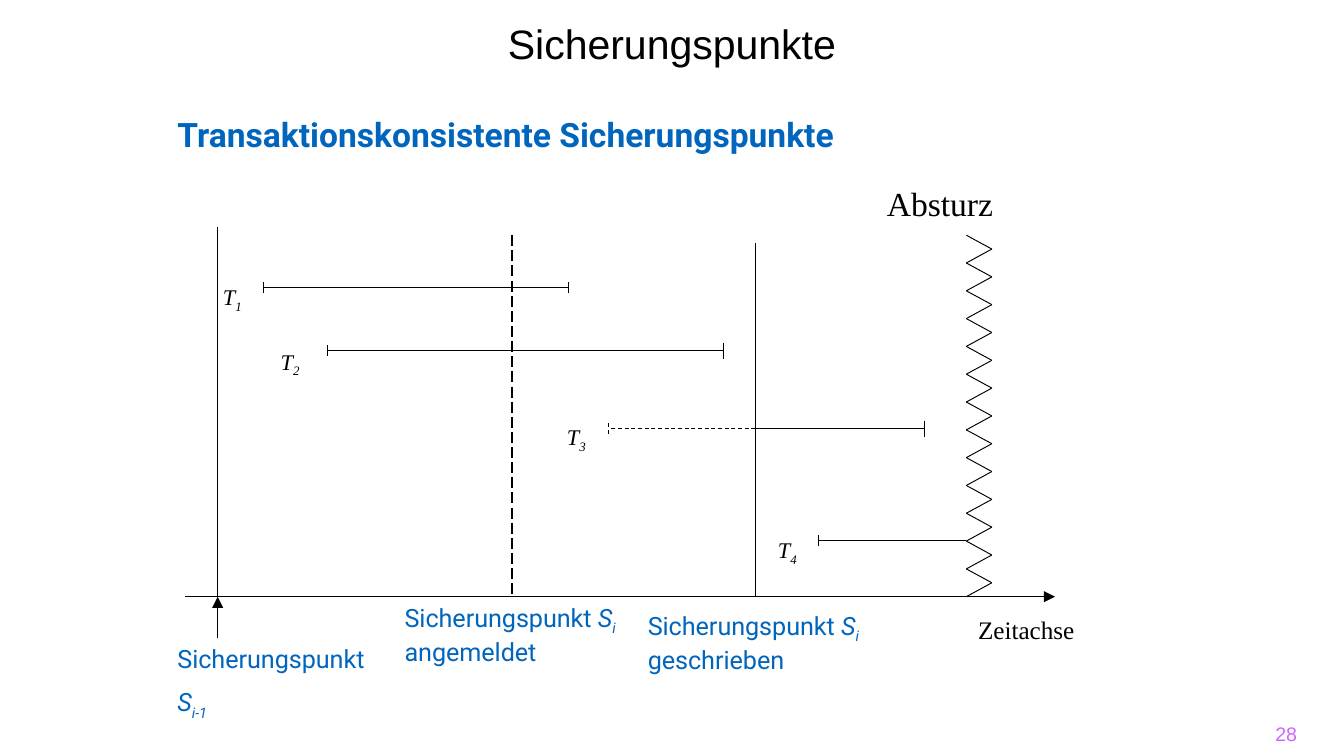
from itertools import pairwise

from lxml.etree import SubElement
from pptx import Presentation
from pptx.dml.color import RGBColor
from pptx.enum.dml import MSO_LINE as Dash
from pptx.enum.shapes import MSO_CONNECTOR as Connector
from pptx.enum.text import MSO_ANCHOR as Anchor, PP_ALIGN as Align
from pptx.oxml.ns import qn
from pptx.util import Inches, Pt

BLACK = RGBColor(0x00, 0x00, 0x00)
BLUE = RGBColor(0x00, 0x65, 0xBD)
VIOLET = RGBColor(0xCC, 0x66, 0xFF)

TITLE = {"name": "Arial", "size": Pt(22), "color": BLACK}
PAGE = {"name": "Arial", "size": Pt(10.5), "color": VIOLET}
HEADING = {"name": "Roboto", "size": Pt(18), "color": BLUE, "bold": True}
LABEL = {"name": "Roboto", "size": Pt(13.5), "color": BLUE}
CRASH = {"name": "Times New Roman", "size": Pt(18), "color": BLACK}
AXIS = {"name": "Times New Roman", "size": Pt(13.5), "color": BLACK}
TRANSACTION = {"name": "Times New Roman", "size": Pt(12), "color": BLACK}

WIDE_INSETS = (0.1, 0.05)
SMALL_INSETS = (0.07, 0.04)
AXIS_Y = 4.44
CRASH_X = 7.19
WRITTEN_X = 5.62
ZIGZAG_TOP = 1.75
ZIGZAG_STEPS = 26


def add_line(shapes, start, end, width=0.5, dash=None, arrow=False):
    points = [Inches(value) for value in (*start, *end)]
    connector = shapes.add_connector(Connector.STRAIGHT, *points)
    connector.line.color.rgb = BLACK
    connector.line.width = Pt(width)
    if dash:
        connector.line.dash_style = dash
    if arrow:
        SubElement(connector.line._ln, qn("a:tailEnd"), type="triangle")
    SubElement(connector._element.spPr, qn("a:effectLst"))


def add_run(paragraph, text, style, italic=False, subscript=False):
    run = paragraph.add_run()
    run.text = text
    for name, value in {**style, "italic": italic}.items():
        if name == "color":
            run.font.color.rgb = value
        else:
            setattr(run.font, name, value)
    if subscript:
        run.font._element.set("baseline", "-25000")


def add_symbol(paragraph, letter, index, style):
    add_run(paragraph, letter, style, italic=True)
    add_run(paragraph, index, style, italic=True, subscript=True)


def add_box(shapes, box, insets=WIDE_INSETS, anchor=Anchor.TOP):
    shape = shapes.add_textbox(*[Inches(value) for value in box])
    frame = shape.text_frame
    horizontal, vertical = [Inches(value) for value in insets]
    settings = {
        "word_wrap": True,
        "vertical_anchor": anchor,
        "margin_left": horizontal,
        "margin_right": horizontal,
        "margin_top": vertical,
        "margin_bottom": vertical,
    }
    for name, value in settings.items():
        setattr(frame, name, value)
    return frame


def add_text(shapes, box, text, style, align=Align.LEFT, **options):
    paragraph = add_box(shapes, box, **options).paragraphs[0]
    paragraph.alignment = align
    add_run(paragraph, text, style)
    return paragraph


def add_savepoint(shapes, x, line_top, label_box, state, dash=None):
    group = shapes.add_group_shape().shapes
    add_line(group, (x, line_top), (x, AXIS_Y), 0.75, dash)
    paragraph = add_text(group, label_box, "Sicherungspunkt ", LABEL, insets=SMALL_INSETS)
    add_symbol(paragraph, "S", "i", LABEL)
    paragraph.add_line_break()
    add_run(paragraph, state, LABEL)


def add_previous_savepoint(shapes):
    x = 1.62
    add_line(shapes, (x, 1.69), (x, AXIS_Y), 0.75)
    add_line(shapes, (x, 4.75), (x, AXIS_Y), 0.75, arrow=True)
    frame = add_box(shapes, (1.25, 4.75, 1.62, 0.65), SMALL_INSETS)
    add_run(frame.paragraphs[0], "Sicherungspunkt", LABEL)
    paragraph = frame.add_paragraph()
    paragraph.space_before = Pt(6.75)
    add_symbol(paragraph, "S", "i-1", LABEL)


def add_transaction(shapes, number, label_box, y, segments, ticks):
    group = shapes.add_group_shape().shapes
    for start, end, dash in segments:
        add_line(group, (start, y), (end, y), dash=dash)
    for x, half_height, dash in ticks:
        add_line(group, (x, y - half_height), (x, y + half_height), dash=dash)
    frame = add_box(group, label_box)
    add_symbol(frame.paragraphs[0], "T", str(number), TRANSACTION)


def add_crash(shapes):
    group = shapes.add_group_shape().shapes
    step = (AXIS_Y - ZIGZAG_TOP) / ZIGZAG_STEPS
    points = [
        (CRASH_X + 0.19 * (index % 2), ZIGZAG_TOP + index * step)
        for index in range(ZIGZAG_STEPS + 1)
    ]
    for start, end in pairwise(points):
        add_line(group, start, end)
    add_text(shapes, (6.5, 1.31, 1.4, 0.4), "Absturz", CRASH)


def main():
    presentation = Presentation()
    presentation.slide_width = Inches(10)
    presentation.slide_height = Inches(10) * 9 // 16
    slide = presentation.slides.add_slide(presentation.slide_layouts[6])
    shapes = slide.shapes

    add_text(shapes, (7.41, 5.31, 2.24, 0.3), "28", PAGE, Align.RIGHT,
             insets=(0, 0.05), anchor=Anchor.MIDDLE)
    title = add_text(shapes, (1.25, 0, 7.5, 0.69), "Sicherungspunkte", TITLE, Align.CENTER)
    title.line_spacing = 1.25
    add_text(shapes, (1.25, 0.81, 7.5, 0.38), "Transaktionskonsistente Sicherungspunkte",
             HEADING, insets=SMALL_INSETS)

    add_line(shapes, (1.38, AXIS_Y), (7.85, AXIS_Y), arrow=True)
    add_text(shapes, (7.18, 4.52, 1, 0.33), "Zeitachse", AXIS)
    add_crash(shapes)

    add_previous_savepoint(shapes)
    add_savepoint(shapes, 3.81, 1.75, (2.94, 4.44, 1.75, 0.53), "angemeldet", Dash.LONG_DASH)
    add_savepoint(shapes, WRITTEN_X, 1.81, (4.75, 4.5, 1.75, 0.53), "geschrieben")

    transactions = [
        ((1.56, 2.06, 0.47, 0.3), 2.14, [(1.96, 4.23, None)],
         [(1.96, 0.04, None), (4.23, 0.04, None)]),
        ((1.99, 2.54, 0.53, 0.3), 2.61, [(5.38, 2.44, None)],
         [(2.44, 0.04, None), (5.38, 0.06, None)]),
        ((4.12, 3.1, 0.47, 0.3), 3.19, [(WRITTEN_X, 4.53, Dash.DASH), (WRITTEN_X, 6.88, None)],
         [(4.53, 0.04, Dash.DASH), (6.88, 0.06, None)]),
        ((5.69, 3.94, 0.47, 0.3), 4.02, [(CRASH_X, 6.09, None)], [(6.09, 0.04, None)]),
    ]
    for number, transaction in enumerate(transactions, start=1):
        add_transaction(shapes, number, *transaction)

    presentation.save("out.pptx")


if __name__ == "__main__":
    main()
